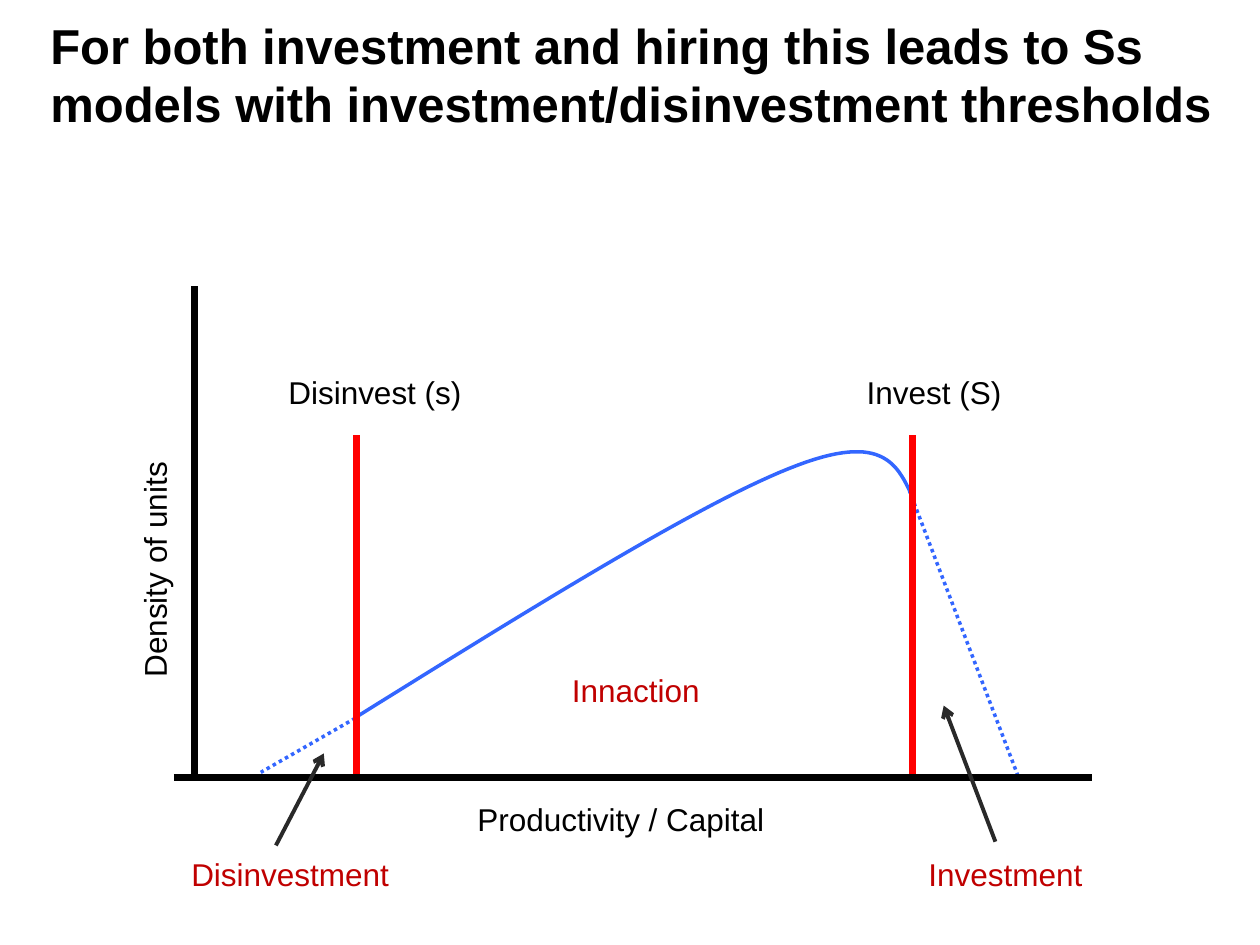
import lxml.etree
import pptx
import pptx.dml.color
import pptx.enum.dml
import pptx.enum.shapes
import pptx.enum.text
import pptx.oxml.ns
import pptx.util
from pptx.util import Inches

BLACK, DARK_RED, RED, BLUE, GREY = "000000", "C00000", "FF0000", "3366FF", "292929"
AXIS_Y = 6.17
S_LOW, S_HIGH = 2.83, 7.24  # disinvestment and investment thresholds


def color(hex_value):
    return pptx.dml.color.RGBColor.from_string(hex_value)


def add_run(paragraph, words, size, hex_value, bold=False):
    run = paragraph.add_run()
    run.text = words
    run.font.name = "Arial"
    run.font.size = pptx.util.Pt(size)
    run.font.bold = bold
    run.font.color.rgb = color(hex_value)


def add_title(slide, words):
    title = slide.shapes.title
    title.left, title.top = Inches(0.3), Inches(0.07)
    title.width, title.height = Inches(9.45), Inches(0.78)
    frame = title.text_frame
    frame.word_wrap = True
    frame.auto_size = pptx.enum.text.MSO_AUTO_SIZE.NONE
    frame.vertical_anchor = pptx.enum.text.MSO_ANCHOR.TOP
    paragraph = frame.paragraphs[0]
    paragraph.alignment = pptx.enum.text.PP_ALIGN.LEFT
    add_run(paragraph, words, 28, BLACK, bold=True)


def add_label(slide, words, left, top, width, hex_value=BLACK, rotation=0):
    label = slide.shapes.add_textbox(
        Inches(left), Inches(top), Inches(width), Inches(0.4))
    label.rotation = rotation
    label.text_frame.word_wrap = True
    label.text_frame.auto_size = pptx.enum.text.MSO_AUTO_SIZE.SHAPE_TO_FIT_TEXT
    add_run(label.text_frame.paragraphs[0], words, 18, hex_value)


def add_line(slide, start, end, hex_value, weight, dotted=False, arrow=False):
    line = slide.shapes.add_connector(
        pptx.enum.shapes.MSO_CONNECTOR.STRAIGHT,
        *(Inches(value) for value in start + end))
    line.line.color.rgb = color(hex_value)
    line.line.width = pptx.util.Pt(weight)
    if dotted:
        line.line.dash_style = pptx.enum.dml.MSO_LINE.ROUND_DOT
    if arrow:
        lxml.etree.SubElement(line.line._get_or_add_ln(),
                              pptx.oxml.ns.qn("a:tailEnd"), type="arrow")
    # An empty effect list removes the theme shadow
    lxml.etree.SubElement(line._element.spPr, pptx.oxml.ns.qn("a:effectLst"))


def bezier(controls, steps=30):
    """Points along a cubic curve, after its start."""
    points = []
    for step in range(1, steps + 1):
        t = step / steps
        weights = ((1 - t) ** 3, 3 * t * (1 - t) ** 2, 3 * t ** 2 * (1 - t), t ** 3)
        points.append(tuple(sum(w * c[axis] for w, c in zip(weights, controls))
                            for axis in (0, 1)))
    return points


def add_density_curve(slide):
    start, peak_join, end = (S_LOW, 5.69), (6.26, 3.72), (S_HIGH, 3.94)
    points = bezier([start, (4.18, 4.85), (5.53, 4.01), peak_join])
    points += bezier([peak_join, (7, 3.42), (7.12, 3.68), end])
    # The builder rounds to whole units, so it gets EMU rather than inches
    builder = slide.shapes.build_freeform(Inches(start[0]), Inches(start[1]))
    builder.add_line_segments([(Inches(x), Inches(y)) for x, y in points],
                              close=False)
    curve = builder.convert_to_shape()
    curve.shadow.inherit = False
    curve.fill.background()
    curve.line.color.rgb = color(BLUE)
    curve.line.width = pptx.util.Pt(2)


def main():
    deck = pptx.Presentation()
    deck.slide_width, deck.slide_height = Inches(10), Inches(7.5)
    slide = deck.slides.add_slide(deck.slide_layouts[5])
    add_title(slide, "For both investment and hiring this leads to Ss models "
                     "with investment/disinvestment thresholds")

    # Density of units: dotted tails around the inaction region
    add_line(slide, (2.82, 5.7), (2.07, 6.13), BLUE, 2, dotted=True)
    add_line(slide, (8.08, 6.16), (7.22, 3.9), BLUE, 2, dotted=True)
    add_density_curve(slide)

    # Thresholds and axes
    for threshold in (S_LOW, S_HIGH):
        add_line(slide, (threshold, AXIS_Y), (threshold, 3.45), RED, 4)
    add_line(slide, (1.54, AXIS_Y), (1.54, 2.27), BLACK, 4)
    add_line(slide, (1.38, AXIS_Y), (8.67, AXIS_Y), BLACK, 4)

    # Threshold and axis labels
    add_label(slide, "Disinvest (s)", 2.19, 2.91, 2.5)
    add_label(slide, "Invest (S)", 6.78, 2.91, 1.52)
    add_label(slide, "Productivity / Capital", 3.69, 6.3, 2.74)
    add_label(slide, "Density of units", 0.14, 4.19, 2.17, rotation=270)

    # Regions, with arrows to the tails
    add_line(slide, (2.19, 6.71), (2.57, 5.98), GREY, 2.25, arrow=True)
    add_line(slide, (7.9, 6.68), (7.49, 5.6), GREY, 2.25, arrow=True)
    for region, left, top in (("Disinvestment", 1.42, 6.74),
                              ("Investment", 7.27, 6.74),
                              ("Innaction", 4.44, 5.28)):
        add_label(slide, region, left, top, 2.83, DARK_RED)

    deck.save("out.pptx")


if __name__ == "__main__":
    main()
